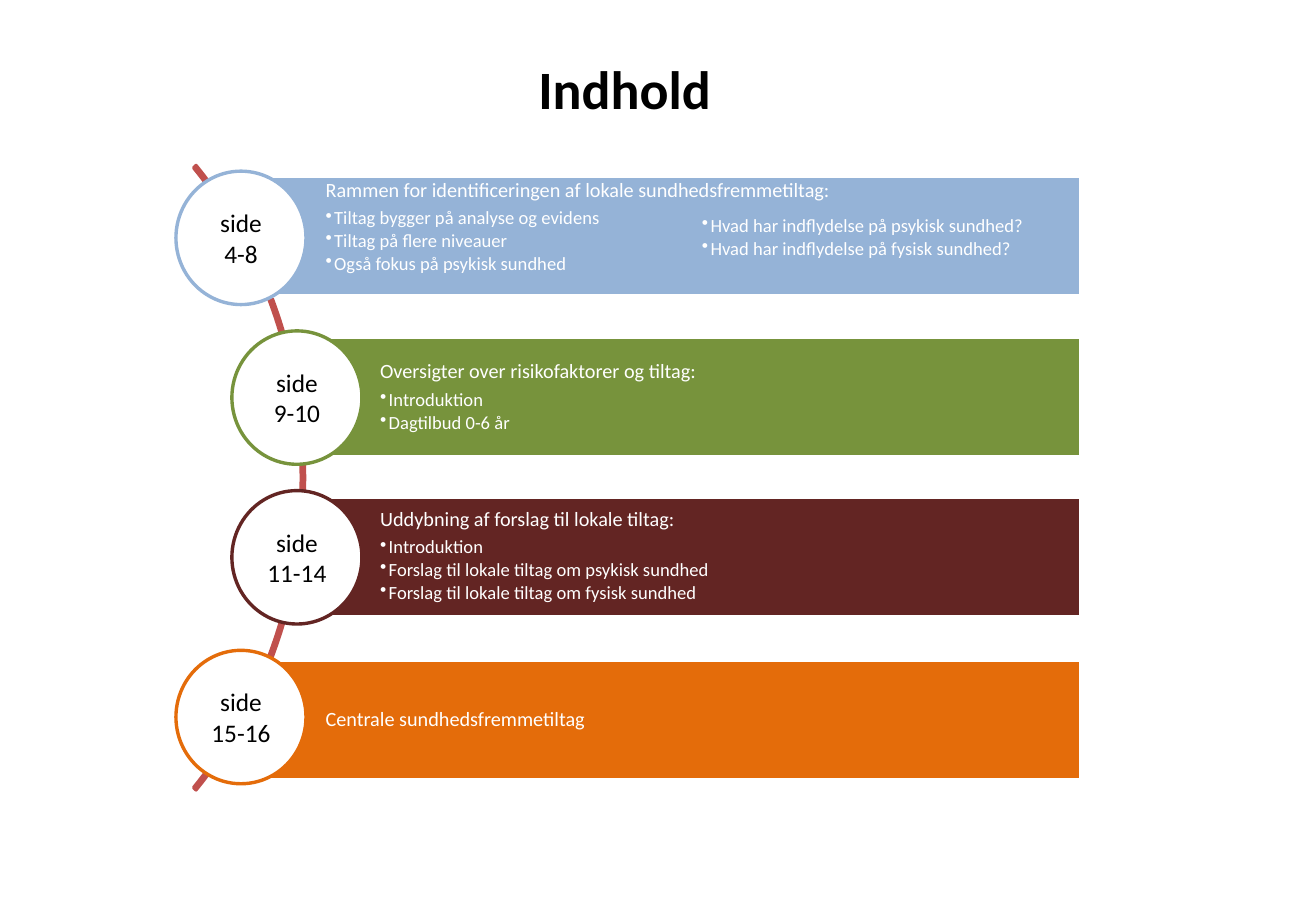
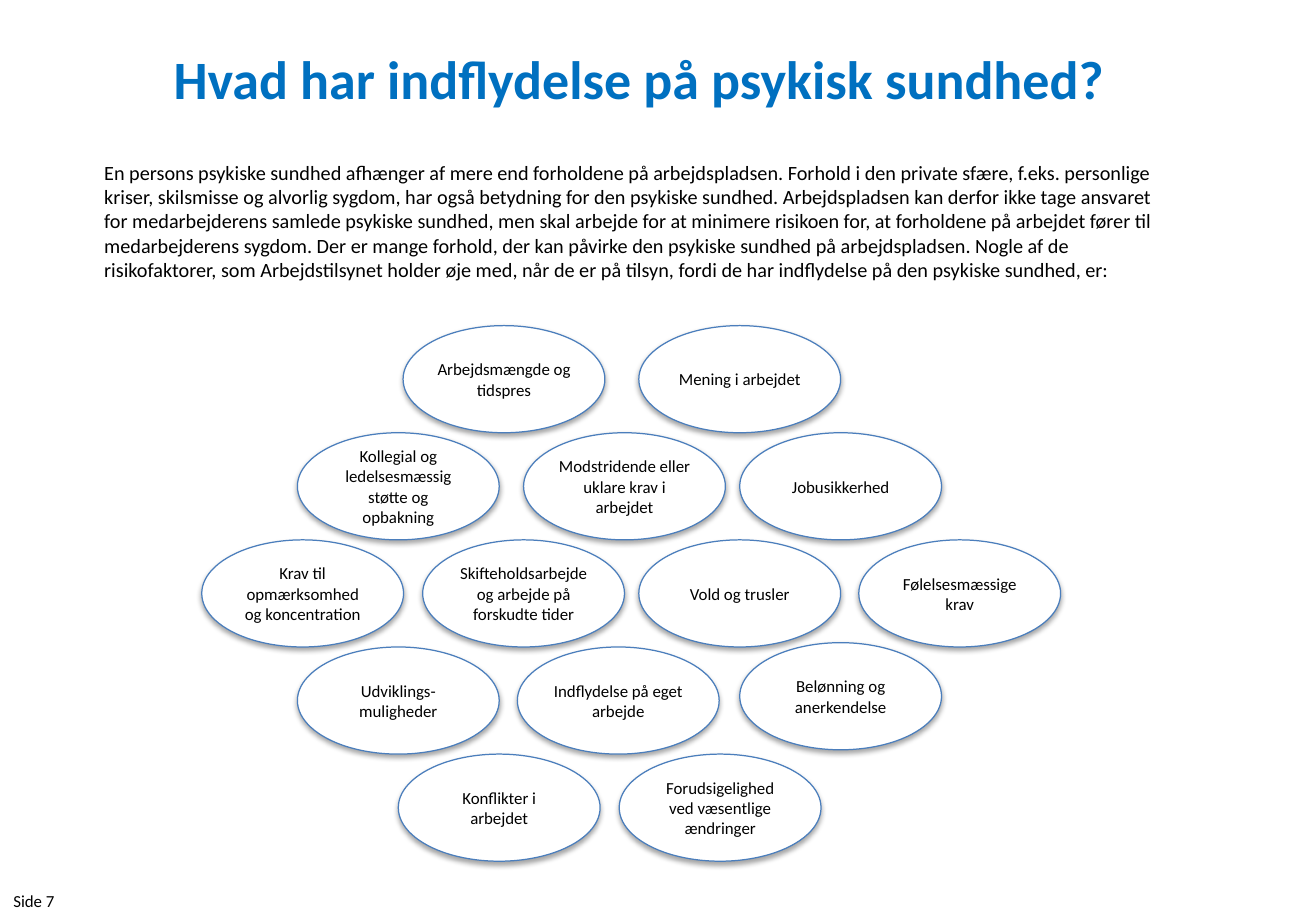
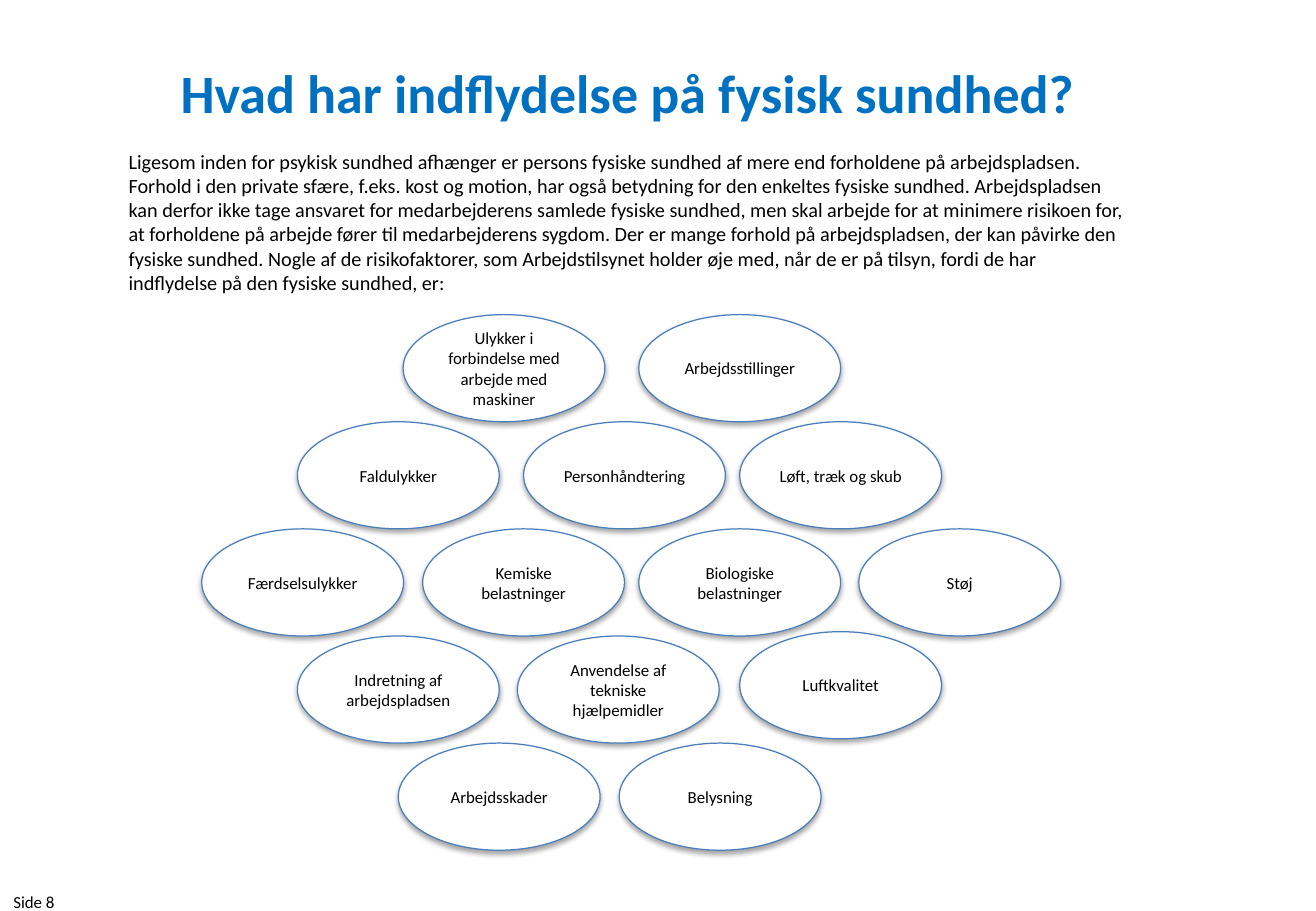
from lxml import etree
from pptx import Presentation
from pptx.dml.color import RGBColor
from pptx.enum.shapes import MSO_SHAPE as SHAPE
from pptx.enum.text import MSO_ANCHOR as ANCHOR, MSO_AUTO_SIZE as AUTO, PP_ALIGN as ALIGN
from pptx.oxml.ns import qn
from pptx.util import Cm, Pt

BLACK = RGBColor(0x00, 0x00, 0x00)
WHITE = RGBColor(0xFF, 0xFF, 0xFF)
TITLE_BLUE = RGBColor(0x00, 0x70, 0xC0)
OVAL_BLUE = RGBColor(0x4B, 0x7E, 0xBC)
ARC_RED = RGBColor(0xC0, 0x50, 0x4D)
LIGHT_BLUE = RGBColor(0x95, 0xB3, 0xD7)
GREEN = RGBColor(0x77, 0x93, 0x3C)
MAROON = RGBColor(0x63, 0x25, 0x23)
ORANGE = RGBColor(0xE4, 0x6C, 0x0A)
FONT = "Calibri"


def set_frame(sp, anchor=ANCHOR.TOP, side=0.28, end=0.15):
    tf = sp.text_frame
    tf.word_wrap = True
    tf.vertical_anchor = anchor
    tf.margin_left = tf.margin_right = Cm(side)
    tf.margin_top = tf.margin_bottom = Cm(end)
    return tf


def add_par(tf, text, size, color=BLACK, bold=False, align=ALIGN.LEFT, bullet=False):
    p = tf.paragraphs[0]
    if p.runs:
        p = tf.add_paragraph()
    p.alignment = align
    if bullet:
        pPr = p._p.get_or_add_pPr()
        pPr.set("marL", str(Cm(0.18)))
        pPr.set("indent", str(-Cm(0.18)))
        etree.SubElement(pPr, qn("a:buChar")).set("char", "•")
        p.line_spacing = 0.9
        p.space_after = Pt(1.6)
    r = p.add_run()
    r.text = text
    r.font.name = FONT
    r.font.size = Pt(size)
    r.font.bold = bold
    r.font.color.rgb = color
    return p


prs = Presentation()
prs.slide_width = Cm(27.52)
prs.slide_height = Cm(19.05)
blank = prs.slide_layouts[6]

s = prs.slides.add_slide(blank)
sp = s.shapes.add_textbox(Cm(2.64), Cm(1.02), Cm(20.85), Cm(2.16))
add_par(set_frame(sp), "Indhold", 32, bold=True, align=ALIGN.CENTER)

arc = s.shapes.add_shape(SHAPE.BLOCK_ARC, Cm(-11.23), Cm(0.25), Cm(17.6), Cm(19.48))
arc.shadow.inherit = False
for i, value in enumerate((189, 27, 0.004)):
    arc.adjustments[i] = value
arc.fill.background()
arc.line.color.rgb = ARC_RED
arc.line.width = Pt(2)

BAR_RIGHT, BAR_H = 22.61, 2.51
CIRCLE_TOP, CIRCLE_STEP = 3.58, 3.34
sections = [
    ("side 4-8", LIGHT_BLUE, 5.16, 3.68, 3.68, ANCHOR.TOP, 0.08,
     "Rammen for identificeringen af lokale sundhedsfremmetiltag:",
     ["Tiltag bygger på analyse og evidens", "Tiltag på flere niveauer",
      "Også fokus på psykisk sundhed"]),
    ("side 9-10", GREEN, 6.3, 7.05, 4.85, ANCHOR.MIDDLE, 0.1,
     "Oversigter over risikofaktorer og tiltag:",
     ["Introduktion", "Dagtilbud 0-6 år"]),
    ("side 11-14", MAROON, 6.3, 10.39, 4.85, ANCHOR.TOP, 0.25,
     "Uddybning af forslag til lokale tiltag:",
     ["Introduktion", "Forslag til lokale tiltag om psykisk sundhed",
      "Forslag til lokale tiltag om fysisk sundhed"]),
    ("side 15-16", ORANGE, 5.16, 13.8, 3.68, ANCHOR.MIDDLE, 0.1,
     "Centrale sundhedsfremmetiltag", []),
]
for i, (pages, color, left, top, circle_left, anchor, end, heading, points) in enumerate(sections):
    bar = s.shapes.add_shape(SHAPE.RECTANGLE, Cm(left), Cm(top), Cm(BAR_RIGHT - left), Cm(BAR_H))
    circle = s.shapes.add_shape(SHAPE.OVAL, Cm(circle_left), Cm(CIRCLE_TOP + i * CIRCLE_STEP),
                                Cm(2.72), Cm(2.79))
    for sp, fill, line in ((bar, color, WHITE), (circle, WHITE, color)):
        sp.shadow.inherit = False
        sp.fill.solid()
        sp.fill.fore_color.rgb = fill
        sp.line.color.rgb = line
        sp.line.width = Pt(2)
    tf = set_frame(bar, anchor, 1.65, end)
    tf.margin_right = Cm(0.1)
    p = add_par(tf, heading, 12, WHITE)
    p.line_spacing = 0.9
    p.space_after = Pt(4.2)
    for point in points:
        add_par(tf, point, 11, WHITE, bullet=True)
    add_par(set_frame(circle, ANCHOR.MIDDLE), pages, 15, align=ALIGN.CENTER)

sp = s.shapes.add_textbox(Cm(13.03), Cm(4.45), Cm(8.9), Cm(1.3))
tf = set_frame(sp, side=1.65, end=0.08)
tf.margin_right = Cm(0.08)
for topic in ("psykisk", "fysisk"):
    add_par(tf, f"Hvad har indflydelse på {topic} sundhed?", 11, WHITE, bullet=True)

OVAL_W, OVAL_H = 4.22, 2.24
OVAL_LEFTS = [
    [8.43, 13.36],
    [6.22, 10.95, 15.47],
    [4.22, 8.84, 13.36, 17.96],
    [6.22, 10.82, 15.47],
    [8.33, 12.95],
]
factor_slides = [
    ("Hvad har indflydelse på psykisk sundhed?", (1.9, 0.81, 22.94, 5.26), 29.3,
     "En persons psykiske sundhed afhænger af mere end forholdene på arbejdspladsen. "
     "Forhold i den private sfære, f.eks. personlige kriser, skilsmisse og alvorlig sygdom, "
     "har også betydning for den psykiske sundhed. Arbejdspladsen kan derfor ikke tage ansvaret "
     "for medarbejderens samlede psykiske sundhed, men skal arbejde for at minimere risikoen for, "
     "at forholdene på arbejdet fører til medarbejderens sygdom. Der er mange forhold, "
     "der kan påvirke den psykiske sundhed på arbejdspladsen. Nogle af de risikofaktorer, "
     "som Arbejdstilsynet holder øje med, når de er på tilsyn, fordi de har indflydelse på "
     "den psykiske sundhed, er:",
     "Side 7", 18.47, 6.81,
     [["Arbejdsmængde og tidspres", "Mening i arbejdet"],
      ["Kollegial og ledelsesmæssig støtte og opbakning",
       "Modstridende eller uklare krav i arbejdet", "Jobusikkerhed"],
      ["Krav til opmærksomhed og koncentration",
       "Skifteholdsarbejde og arbejde på forskudte tider",
       "Vold og trusler", "Følelsesmæssige krav"],
      ["Udviklings-muligheder", "Indflydelse på eget arbejde", "Belønning og anerkendelse"],
      ["Konflikter i arbejdet", "Forudsigelighed ved væsentlige ændringer"]]),
    ("Hvad har indflydelse på fysisk sundhed?", (2.41, 1.09, 21.44, 5.26), 14.65,
     "Ligesom inden for psykisk sundhed afhænger er persons fysiske sundhed af mere end "
     "forholdene på arbejdspladsen. Forhold i den private sfære, f.eks. kost og motion, "
     "har også betydning for den enkeltes fysiske sundhed. Arbejdspladsen kan derfor ikke tage "
     "ansvaret for medarbejderens samlede fysiske sundhed, men skal arbejde for at minimere "
     "risikoen for, at forholdene på arbejde fører til medarbejderens sygdom. Der er mange "
     "forhold på arbejdspladsen, der kan påvirke den fysiske sundhed. Nogle af de "
     "risikofaktorer, som Arbejdstilsynet holder øje med, når de er på tilsyn, fordi de har "
     "indflydelse på den fysiske sundhed, er:",
     "Side 8", 18.49, 6.58,
     [["Ulykker i forbindelse med arbejde med maskiner", "Arbejdsstillinger"],
      ["Faldulykker", "Personhåndtering", "Løft, træk og skub"],
      ["Færdselsulykker", "Kemiske belastninger", "Biologiske belastninger", "Støj"],
      ["Indretning af arbejdspladsen", "Anvendelse af tekniske hjælpemidler", "Luftkvalitet"],
      ["Arbejdsskader", "Belysning"]]),
]
for title, box, gap, body, page, page_top, ovals_top, factors in factor_slides:
    s = prs.slides.add_slide(blank)
    sp = s.shapes.add_textbox(*[Cm(v) for v in box])
    tf = set_frame(sp)
    tf.auto_size = AUTO.SHAPE_TO_FIT_TEXT
    add_par(tf, title, 32, TITLE_BLUE, bold=True, align=ALIGN.CENTER)
    add_par(tf, body, 12).space_before = Pt(gap)

    sp = s.shapes.add_textbox(Cm(0), Cm(page_top), Cm(1.8), Cm(0.7))
    add_par(set_frame(sp), page, 10)

    for row, (lefts, names) in enumerate(zip(OVAL_LEFTS, factors)):
        for col, (left, name) in enumerate(zip(lefts, names)):
            top = ovals_top + row * OVAL_H
            if (row, col) == (3, 2):
                top -= 0.09
            sp = s.shapes.add_shape(SHAPE.OVAL, Cm(left), Cm(top), Cm(OVAL_W), Cm(OVAL_H))
            sp.fill.solid()
            sp.fill.fore_color.rgb = WHITE
            sp.line.color.rgb = OVAL_BLUE
            sp.line.width = Pt(0.75)
            sp.shadow.inherit = False
            effects = sp._element.spPr.find(qn("a:effectLst"))
            shadow = etree.SubElement(effects, qn("a:outerShdw"), blurRad=str(Pt(3.1)),
                                      dist=str(Pt(1.8)), dir="5400000", rotWithShape="0")
            shade = etree.SubElement(shadow, qn("a:srgbClr"), val=str(BLACK))
            etree.SubElement(shade, qn("a:alpha"), val="35000")
            side = 0.28 if (row, col) == (2, 0) else 0.1
            add_par(set_frame(sp, ANCHOR.MIDDLE, side), name, 10, align=ALIGN.CENTER)

prs.save("out.pptx")
